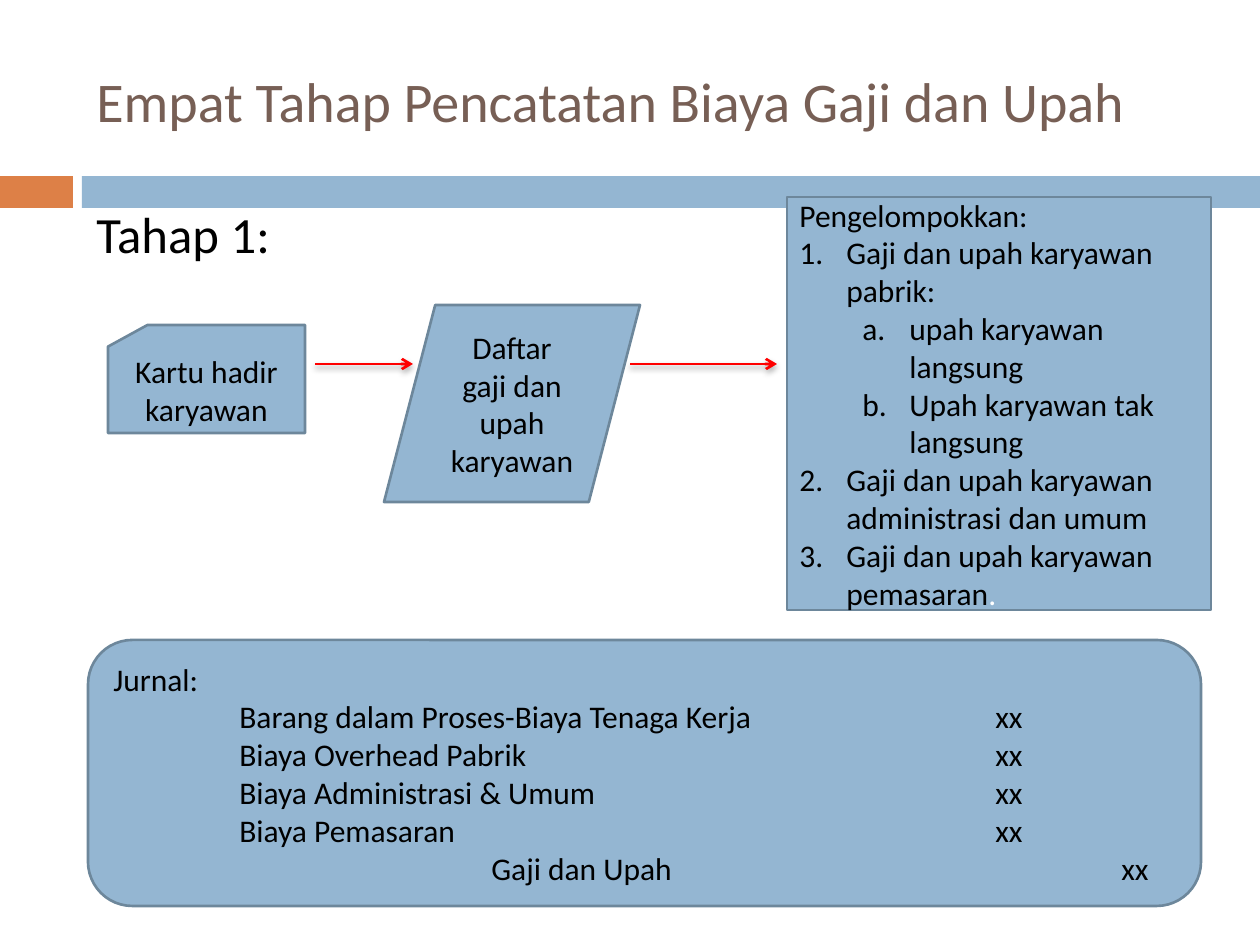
from lxml.etree import SubElement
from pptx import Presentation
from pptx.dml.color import RGBColor
from pptx.enum.shapes import MSO_CONNECTOR, MSO_SHAPE
from pptx.enum.text import MSO_ANCHOR, PP_ALIGN
from pptx.oxml.ns import qn
from pptx.util import Pt

# Content: lengths in px, 126 to the inch
INCH = 126
SIZE = (1260, 945)
HEX = {"orange": "DD8047", "blue": "94B6D2", "edge": "6D879B",
       "brown": "775F55", "black": "000000", "white": "FFFFFF", "red": "FF0000"}
BARS = [((0, 176, 73, 32), "orange"), ((82, 176, 1178, 32), "blue")]
TITLE = "Empat Tahap Pencatatan Biaya Gaji dan Upah"
STAGE = "Tahap 1:"
STEPS = [
    (MSO_SHAPE.FLOWCHART_CARD, (108, 325, 197, 108), "Kartu hadir karyawan"),
    (MSO_SHAPE.FLOWCHART_DATA, (384, 305, 256, 197), "Daftar gaji dan upah karyawan"),
]
ARROWS = [(315, 413), (630, 777)]
ARROW_Y = 364
GROUPS = [  # level (None: no number), text
    (None, "Pengelompokkan:"),
    (0, "Gaji dan upah karyawan pabrik:"),
    (1, "upah karyawan langsung"),
    (1, "Upah karyawan tak langsung"),
    (0, "Gaji dan upah karyawan administrasi dan umum"),
    (0, "Gaji dan upah karyawan pemasaran"),
]
LISTS = [("arabicPeriod", 110), ("alphaLcPeriod", 110)]
MARGINS = [47, 110]
HANG = 47
DEBIT, CREDIT = (1, 7), (3, 8)  # tab stops in inches
JOURNAL = [
    ("Barang dalam Proses-Biaya Tenaga Kerja", DEBIT),
    ("Biaya Overhead Pabrik", DEBIT),
    ("Biaya Administrasi & Umum", DEBIT),
    ("Biaya Pemasaran", DEBIT),
    ("Gaji dan Upah", CREDIT),
]


def px(n):
    return round(n * 914400 / INCH)


def color(name):
    return RGBColor.from_string(HEX[name])


def add_run(para, text, size=18, ink="black"):
    run = para.add_run()
    run.text = text
    run.font.size = Pt(size)
    run.font.name = "Calibri"
    run.font.color.rgb = color(ink)


def add_box(kind, area, fill="blue", edge="edge"):
    box = slide.shapes.add_shape(kind, *map(px, area))
    box.shadow.inherit = False
    box.fill.solid()
    box.fill.fore_color.rgb = color(fill)
    if edge:
        box.line.color.rgb = color(edge)
        box.line.width = Pt(1.5)
    else:
        box.line.fill.background()
    box.text_frame.word_wrap = True
    box.text_frame.vertical_anchor = MSO_ANCHOR.MIDDLE
    return box


def add_label(area, text, size, ink, anchor):
    frame = slide.shapes.add_textbox(*map(px, area)).text_frame
    frame.word_wrap = True
    frame.vertical_anchor = anchor
    add_run(frame.paragraphs[0], text, size, ink)


def next_para(frame, first):
    para = frame.paragraphs[0] if first else frame.add_paragraph()
    para.alignment = PP_ALIGN.LEFT
    return para


def add_arrow(start, end):
    line = slide.shapes.add_connector(
        MSO_CONNECTOR.STRAIGHT, px(start), px(ARROW_Y), px(end), px(ARROW_Y))
    line.line.color.rgb = color("red")
    line.line.width = Pt(1.5)
    props = line._element.spPr
    SubElement(props.find(qn("a:ln")), qn("a:tailEnd"), type="arrow")
    effect = SubElement(props, qn("a:effectLst"))
    shade = SubElement(effect, qn("a:outerShdw"), blurRad=str(Pt(3.5)),
                       dist=str(Pt(2.2)), dir="5400000", rotWithShape="0")
    tint = SubElement(shade, qn("a:srgbClr"), val=HEX["black"])
    SubElement(tint, qn("a:alpha"), val="32000")


deck = Presentation()
deck.slide_width, deck.slide_height = map(px, SIZE)
slide = deck.slides.add_slide(deck.slide_layouts[6])

# Header bars, title and stage
for area, fill in BARS:
    add_box(MSO_SHAPE.RECTANGLE, area, fill, None)
add_label((84, 32, 1124, 136), TITLE, 32, "brown", MSO_ANCHOR.MIDDLE)
add_label((84, 197, 1147, 718), STAGE, 29, "black", MSO_ANCHOR.TOP)

# Flow steps
for kind, area, text in STEPS:
    para = add_box(kind, area).text_frame.paragraphs[0]
    para.alignment = PP_ALIGN.CENTER
    add_run(para, text)

# Numbered groups
frame = add_box(MSO_SHAPE.FLOWCHART_PROCESS, (787, 197, 424, 413)).text_frame
for i, (level, text) in enumerate(GROUPS):
    para = next_para(frame, i == 0)
    if level is not None:
        para.level = level
        props = para._p.get_or_add_pPr()
        props.set("marL", str(px(MARGINS[level])))
        props.set("indent", str(px(-HANG)))
        SubElement(props, qn("a:buFont"), typeface="+mj-lt")
        SubElement(props, qn("a:buAutoNum"), type=LISTS[level][0])
    add_run(para, text)
add_run(para, ".", ink="white")

for start, end in ARROWS:
    add_arrow(start, end)

# Journal entry
frame = add_box(MSO_SHAPE.ROUNDED_RECTANGLE, (88, 640, 1113, 266)).text_frame
add_run(next_para(frame, True), "Jurnal:")
for name, stops in JOURNAL:
    para = next_para(frame, False)
    tabs = SubElement(para._p.get_or_add_pPr(), qn("a:tabLst"))
    for stop in stops:
        SubElement(tabs, qn("a:tab"), pos=str(px(stop * INCH)), algn="l")
    add_run(para, f"\t{name}\txx")

deck.save("out.pptx")
